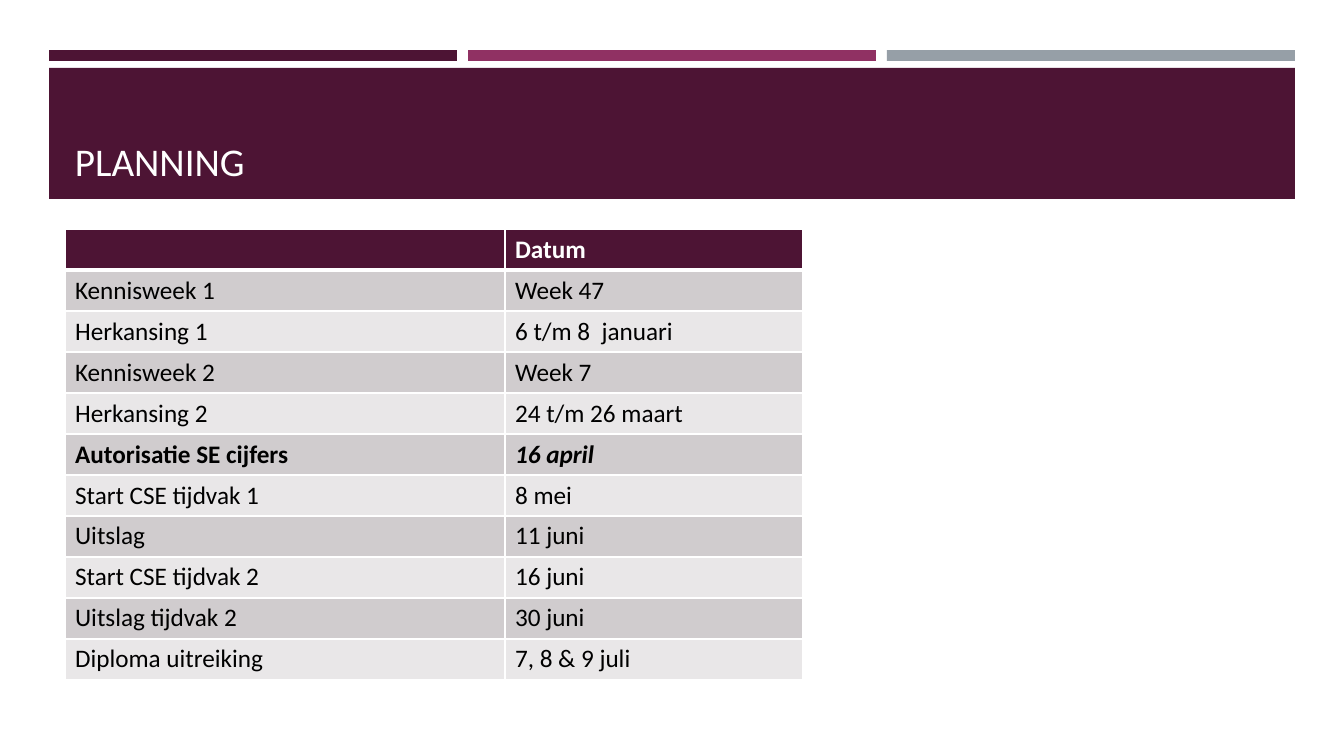
from lxml.etree import SubElement
from pptx import Presentation
from pptx.dml.color import RGBColor
from pptx.enum.shapes import MSO_SHAPE as SHAPE
from pptx.enum.text import MSO_ANCHOR as ANCHOR
from pptx.oxml.ns import qn
from pptx.util import Pt

PX = 914400 / 100.8
PLUM, WHITE, BLACK = "4D1434", "FFFFFF", "000000"


def px(*lengths):
    return [round(n * PX) for n in lengths]


def paint(fill, color):
    fill.solid()
    fill.fore_color.rgb = RGBColor.from_string(color)


prs = Presentation()
prs.slide_width, prs.slide_height = px(1344, 756)
s = prs.slides.add_slide(prs.slide_layouts[6])

bars = [
    (49, 50, 408, 11, PLUM),
    (468, 50, 408, 11, "903163"),
    (887, 50, 408, 11, "969FA7"),
    (49, 68, 1246, 131, PLUM),
]
for x, y, w, h, color in bars:
    sp = s.shapes.add_shape(SHAPE.RECTANGLE, *px(x, y, w, h))
    sp.shadow.inherit = False
    paint(sp.fill, color)
    sp.line.fill.background()

title = s.shapes.add_textbox(*px(65, 78, 1216, 111))
tf = title.text_frame
tf.word_wrap = True
tf.vertical_anchor = ANCHOR.BOTTOM
tf.text = "PLANNING"
font = tf.paragraphs[0].runs[0].font
font.name, font.size = "Calibri", Pt(28)
paint(font.fill, WHITE)

rows = [
    ("", "Datum"),
    ("Kennisweek 1", "Week 47"),
    ("Herkansing 1", "6 t/m 8  januari"),
    ("Kennisweek 2", "Week 7"),
    ("Herkansing 2", "24 t/m 26 maart"),
    ("Autorisatie SE cijfers", "16 april"),
    ("Start CSE tijdvak 1", "8 mei"),
    ("Uitslag", "11 juni"),
    ("Start CSE tijdvak 2", "16 juni"),
    ("Uitslag tijdvak 2", "30 juni"),
    ("Diploma uitreiking", "7, 8 & 9 juli"),
]
widths = px(440, 298)
frame = s.shapes.add_table(len(rows), 2, *px(65, 229, 738, 41 * len(rows)))
table = frame.table
for column, width in zip(table.columns, widths):
    column.width = width

for i, row in enumerate(rows):
    table.rows[i].height = px(41)[0]
    header = i == 0
    row_fill = PLUM if header else ("E9E7E8", "D0CCCE")[i % 2]
    for j, text in enumerate(row):
        cell = table.cell(i, j)
        tcPr = cell._tc.get_or_add_tcPr()
        for side in "LRTB":
            thick = (header and side == "B") or (i == 1 and side == "T")
            ln = SubElement(tcPr, qn(f"a:ln{side}"), w=str(Pt(3 if thick else 1)))
            solid = SubElement(ln, qn("a:solidFill"))
            SubElement(solid, qn("a:srgbClr"), val=WHITE)
        paint(cell.fill, row_fill)
        p = cell.text_frame.paragraphs[0]
        p.text = text
        for r in p.runs:
            r.font.name, r.font.size = "Calibri", Pt(18)
            r.font.bold = header or row[0].startswith("Autorisatie")
            r.font.italic = text == "16 april"
            paint(r.font.fill, WHITE if header else BLACK)

prs.save("out.pptx")
